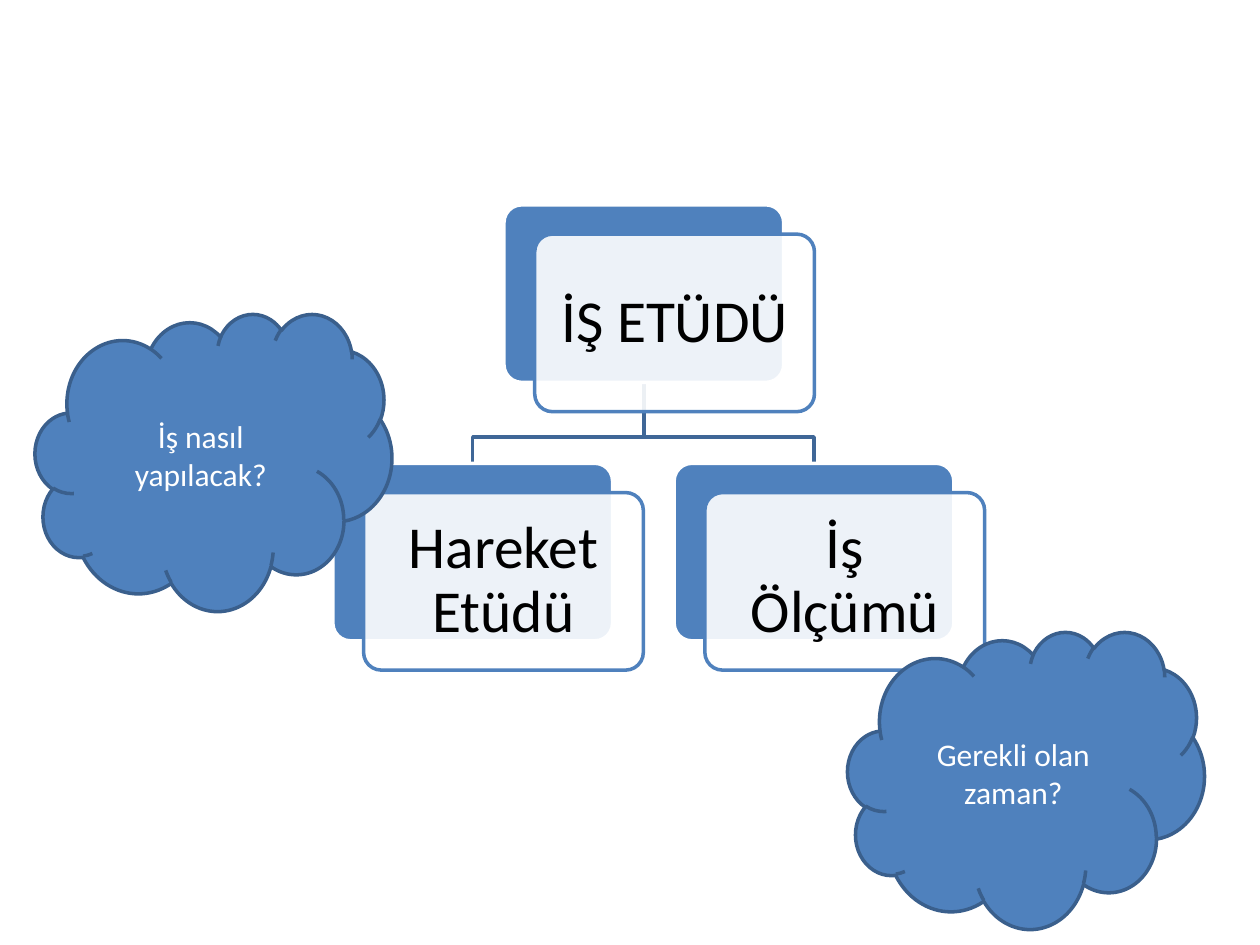
from dataclasses import dataclass

from lxml import etree
from pptx import Presentation
from pptx import util as u
from pptx.dml.color import RGBColor as Rgb
from pptx.enum import shapes, text
from pptx.oxml.ns import qn

Cm, Pt = u.Cm, u.Pt


@dataclass(frozen=True)
class Theme:
    blue: str = "4F81BD"
    edge: str = "3A5F8C"
    link: str = "3F6797"
    white: str = "FFFFFF"
    black: str = "000000"
    font: str = "Calibri"
    big: int = 34
    small: int = 18


theme = Theme()


def write(frame, words, size, color, pad=0.25, lines=None, after=None):
    frame.word_wrap = True
    frame.vertical_anchor = text.MSO_ANCHOR.MIDDLE
    frame.margin_left = frame.margin_right = Cm(pad)
    frame.margin_top = frame.margin_bottom = Cm(pad if lines else pad / 2)
    par = frame.paragraphs[0]
    par.alignment = text.PP_ALIGN.CENTER
    par.line_spacing = lines
    par.space_after = after
    run = par.add_run()
    run.text = words
    run.font.name = theme.font
    run.font.size = Pt(size)
    run.font.color.rgb = Rgb.from_string(color)


def paint(shape, line, fill=None):
    shape.shadow.inherit = False
    shape.line.color.rgb = Rgb.from_string(line)
    shape.line.width = Pt(2)
    if fill:
        shape.fill.solid()
        shape.fill.fore_color.rgb = Rgb.from_string(fill)
    else:
        shape.fill.background()


deck = Presentation()
deck.slide_width, deck.slide_height = Cm(25.4), Cm(19.05)
slide = deck.slides.add_slide(deck.slide_layouts[6])
items = slide.shapes

# Layout of the chart
wide, high = 5.64, 3.58
shift_x, shift_y = 0.62, 0.59
inset = 0.11
root = (10.16, 4.13, "İŞ ETÜDÜ")
kids = [(6.71, 9.34, "Hareket Etüdü"), (13.59, 9.34, "İş Ölçümü")]

# Links from the root to its children
mid, base, bend = root[0] + wide / 2, root[1] + high, 8.81
for left, top, _ in reversed(kids):
    end = left + wide / 2
    path = items.build_freeform(Cm(mid), Cm(base))
    path.add_line_segments(
        [(Cm(mid), Cm(bend)), (Cm(end), Cm(bend)), (Cm(end), Cm(top))],
        close=False)
    paint(path.convert_to_shape(), theme.link)

# Cards: blue back, translucent front, label
for left, top, words in [root, *kids]:
    x, y = left + shift_x, top + shift_y
    spots = [(left, top, theme.white, theme.blue),
             (x, y, theme.blue, theme.white)]
    for px, py, line, fill in spots:
        card = items.add_shape(shapes.MSO_SHAPE.ROUNDED_RECTANGLE,
                               Cm(px), Cm(py), Cm(wide), Cm(high))
        card.adjustments[0] = 0.1
        paint(card, line, fill)
    tint = card.fill._xPr.find(qn("a:solidFill"))[0]
    etree.SubElement(tint, qn("a:alpha"), val="90000")
    label = items.add_textbox(Cm(x + inset), Cm(y + inset),
                              Cm(wide - 2 * inset), Cm(high - 2 * inset))
    write(label.text_frame, words, theme.big, theme.black,
          pad=0.36, lines=0.9, after=Pt(12))

# Question clouds
for left, top, words in [(0.71, 6.32, "İş nasıl yapılacak?"),
                         (17.09, 12.73, "Gerekli olan zaman?")]:
    cloud = items.add_shape(shapes.MSO_SHAPE.CLOUD,
                            Cm(left), Cm(top), Cm(7.19), Cm(5.99))
    paint(cloud, theme.edge, theme.blue)
    write(cloud.text_frame, words, theme.small, theme.white)

deck.save("out.pptx")
